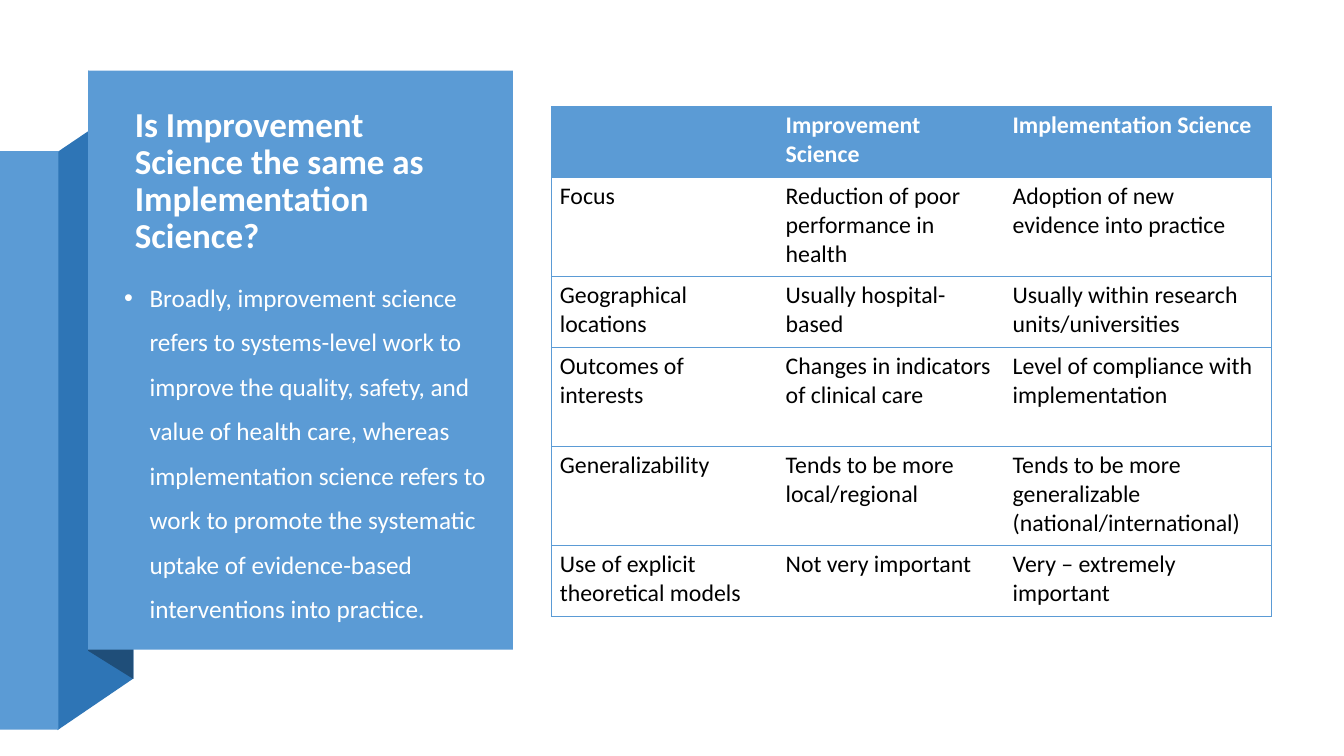
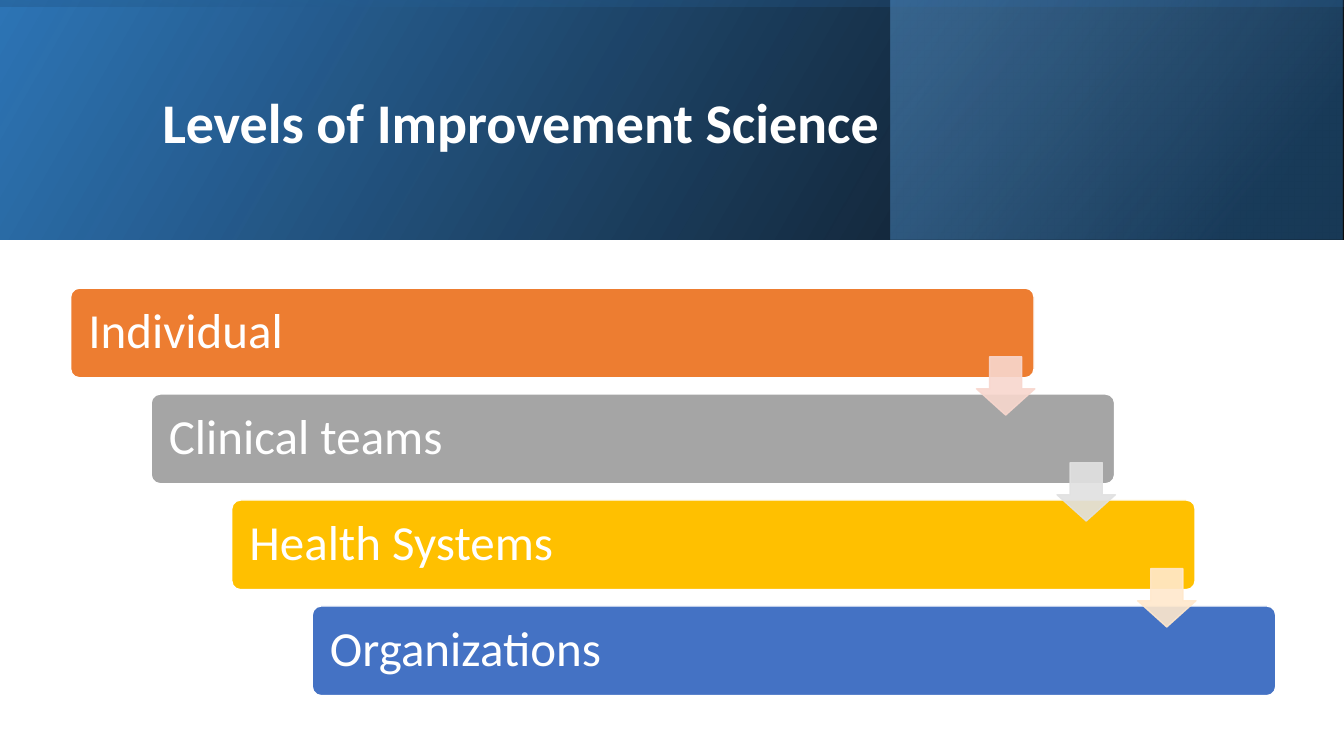
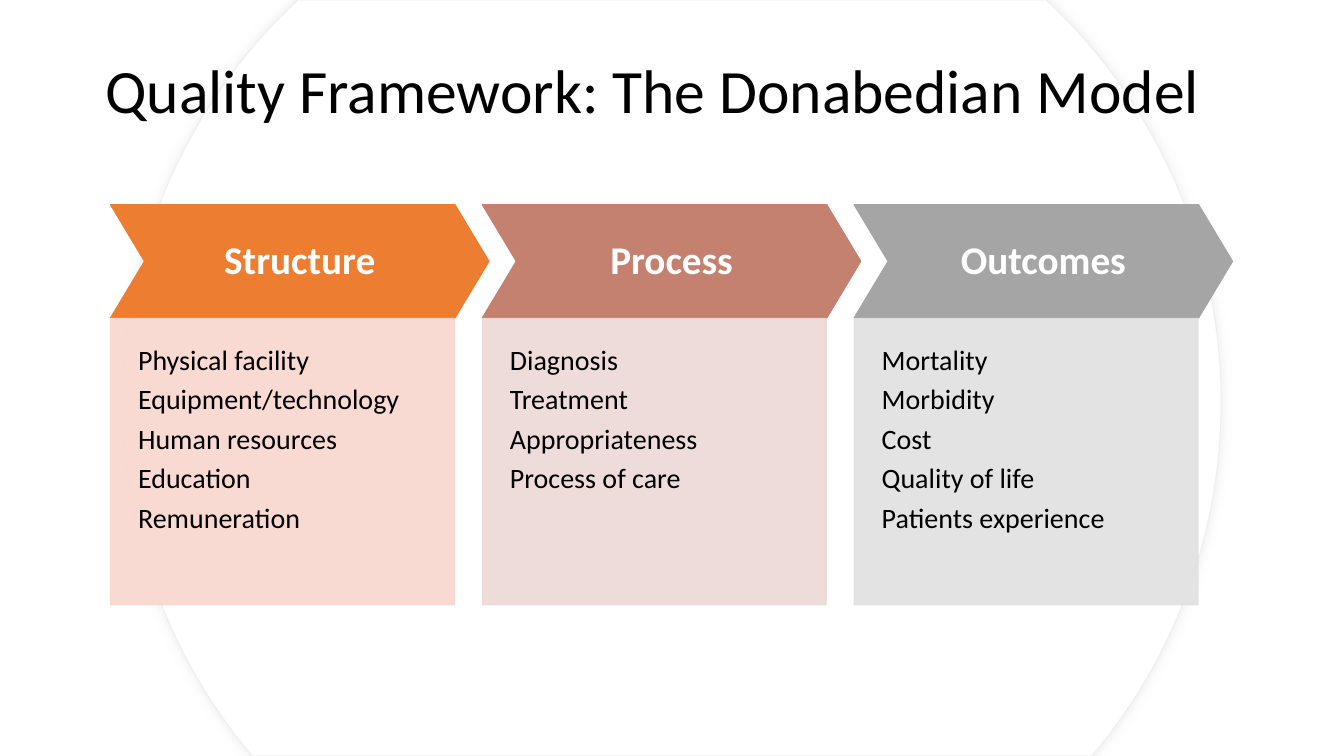
import math
from dataclasses import dataclass
from typing import NamedTuple, Optional

from pptx import Presentation
from pptx import util as u
from pptx.dml.color import RGBColor
from pptx.enum import shapes, text
from pptx.oxml.ns import qn
from lxml import etree


@dataclass(frozen=True)
class Theme:
    font: str = "Calibri"
    white: str = "FFFFFF"
    black: str = "000000"
    blue: str = "5B9BD5"
    mid_blue: str = "2E75B6"
    navy: str = "1F4E79"
    royal: str = "4472C4"
    orange: str = "ED7D31"
    clay: str = "C48170"
    gray: str = "A5A5A5"
    gold: str = "FFC000"
    pale_orange: str = "F8D7CE"
    pale_clay: str = "EDD9D7"
    pale_gray: str = "E1E1E1"
    pale_gold: str = "FFE8CC"
    ring: str = "EFEFEF"
    shade: str = "D9D9D9"
    title_size: float = 44
    banner_size: float = 40
    level_size: float = 35
    stage_size: float = 28
    panel_title_size: float = 25
    card_size: float = 20
    body_size: float = 18
    table_size: float = 17


THEME = Theme()
SLIDE_WIDTH, SLIDE_HEIGHT = 33.87, 19.05
NO_GRID_STYLE = "{2D5ABB26-0587-4C30-8999-92F81FD0307C}"


class Area(NamedTuple):
    """Left, top, width and height in centimetres."""
    left: float
    top: float
    width: float
    height: float

    def lengths(self):
        return [u.Cm(value) for value in self]


class TextStyle(NamedTuple):
    size: float
    color: str
    bold: bool = False
    align: text.PP_ALIGN = text.PP_ALIGN.LEFT
    spacing: float = 0.9
    after: float = 0


class GradientStop(NamedTuple):
    position: float
    color: str
    opacity: int


class Band(NamedTuple):
    area: Area
    start: GradientStop
    end: GradientStop
    angle: float


class Level(NamedTuple):
    name: str
    color: str
    arrow: Optional[str]


class Stage(NamedTuple):
    name: str
    color: str
    pale: str
    items: list[str]


def rgb(color: str) -> RGBColor:
    return RGBColor.from_string(color)


def add_child(parent, tag: str, **attributes):
    child = etree.SubElement(parent, qn(tag))
    for name, value in attributes.items():
        child.set(name, str(value))
    return child


def set_opacity(element, percent: int) -> None:
    for color in element.iter(qn("a:srgbClr")):
        add_child(color, "a:alpha", val=percent * 1000)


def paint(shape, fill: str, line: Optional[str] = None, width: float = 1, opacity: int = 100) -> None:
    shape.shadow.inherit = False
    shape.fill.solid()
    shape.fill.fore_color.rgb = rgb(fill)
    if line:
        shape.line.color.rgb = rgb(line)
        shape.line.width = u.Pt(width)
    else:
        shape.line.fill.background()
    if opacity < 100:
        set_opacity(shape._element.spPr, opacity)


def add_box(slide, kind, area: Area, fill: str, line: Optional[str] = None, opacity: int = 100):
    box = slide.shapes.add_shape(kind, *area.lengths())
    paint(box, fill, line, opacity=opacity)
    return box


def add_outline(slide, points: list[tuple[float, float]], fill: str, **look):
    corners = [(u.Cm(x), u.Cm(y)) for x, y in points]
    builder = slide.shapes.build_freeform(*corners[0], scale=1.0)
    builder.add_line_segments(corners[1:], close=True)
    outline = builder.convert_to_shape()
    paint(outline, fill, **look)
    return outline


def format_para(para, style: TextStyle) -> None:
    para.alignment = style.align
    para.line_spacing = style.spacing
    para.space_after = u.Pt(style.after)
    para.font.name = THEME.font
    para.font.size = u.Pt(style.size)
    para.font.bold = style.bold
    para.font.color.rgb = rgb(style.color)


def write(shape, lines: list[str], style: TextStyle, anchor=text.MSO_ANCHOR.MIDDLE,
          margin: Optional[float] = None) -> None:
    frame = shape.text_frame
    frame.word_wrap = True
    frame.vertical_anchor = anchor
    if margin is not None:
        frame.margin_left = frame.margin_right = u.Cm(margin)
        frame.margin_top = frame.margin_bottom = u.Cm(margin)
    frame.text = "\n".join(lines)
    for para in frame.paragraphs:
        format_para(para, style)


def add_text(slide, area: Area, words: str, style: TextStyle, anchor=text.MSO_ANCHOR.MIDDLE):
    box = slide.shapes.add_textbox(*area.lengths())
    write(box, [words], style, anchor)
    return box


def add_bullet(para, indent: float) -> None:
    properties = para._p.get_or_add_pPr()
    properties.set("marL", str(u.Cm(indent)))
    properties.set("indent", str(-u.Cm(indent)))
    add_child(properties, "a:buFont", typeface="Arial")
    add_child(properties, "a:buChar", char="•")


def set_borders(cell, sides: list[str]) -> None:
    properties = cell._tc.get_or_add_tcPr()
    for index, side in enumerate(sides):
        border = etree.Element(qn(f"a:{side}"), w=str(u.Pt(0.5)))
        add_child(add_child(border, "a:solidFill"), "a:srgbClr", val=THEME.blue)
        properties.insert(index, border)


def add_comparison(slide, left: float, top: float, widths: list[float],
                   heights: list[float], rows: list[list[str]]) -> None:
    area = Area(left, top, sum(widths), sum(heights))
    table = slide.shapes.add_table(len(rows), len(widths), *area.lengths()).table
    table.horz_banding = False
    table._tbl.tblPr.find(qn("a:tableStyleId")).text = NO_GRID_STYLE
    for column, width in zip(table.columns, widths):
        column.width = u.Cm(width)
    for row, height in zip(table.rows, heights):
        row.height = u.Cm(height)
    header = TextStyle(THEME.table_size, THEME.white, bold=True, spacing=1)
    body = TextStyle(THEME.table_size, THEME.black, spacing=1)
    for row_index, row in enumerate(rows):
        for column_index, words in enumerate(row):
            cell = table.cell(row_index, column_index)
            cell.margin_left = cell.margin_right = u.Cm(0.22)
            cell.margin_top = cell.margin_bottom = u.Cm(0.12)
            cell.text = words
            format_para(cell.text_frame.paragraphs[0], body if row_index else header)
            if row_index:
                cell.fill.background()
            else:
                cell.fill.solid()
                cell.fill.fore_color.rgb = rgb(THEME.blue)
            sides = ["lnL"] if column_index == 0 else []
            sides += ["lnR"] if column_index == len(row) - 1 else []
            set_borders(cell, sides + ["lnT", "lnB"])


def build_comparison_slide(slide) -> None:
    rectangle = shapes.MSO_SHAPE.RECTANGLE
    add_outline(slide, [(1.45, 18.4), (3.36, 17.1), (3.36, 2.54), (1.45, 3.83)], THEME.mid_blue)
    add_box(slide, rectangle, Area(0, 3.81, 1.47, 14.58), THEME.blue)
    add_outline(slide, [(2.22, 16.4), (3.36, 17.11), (3.36, 2.51), (2.22, 1.78)], THEME.navy)
    add_box(slide, rectangle, Area(2.22, 1.78, 10.71, 14.59), THEME.blue)
    add_text(slide, Area(3.15, 2.54, 8.84, 4.09),
             "Is Improvement Science the same as Implementation Science?",
             TextStyle(THEME.panel_title_size, THEME.white, bold=True, spacing=0.88))
    body = add_text(
        slide, Area(2.88, 6.63, 10.03, 9.75),
        "Broadly, improvement science refers to systems-level work to improve the quality, "
        "safety, and value of health care, whereas implementation science refers to work to "
        "promote the systematic uptake of evidence-based interventions into practice.",
        TextStyle(THEME.body_size, THEME.white, spacing=1.47), text.MSO_ANCHOR.TOP)
    add_bullet(body.text_frame.paragraphs[0], 0.64)
    add_comparison(
        slide, 13.89, 2.68, [5.69, 5.72, 6.75], [1.78, 2.5, 1.78, 2.5, 2.5, 1.78],
        [["", "Improvement Science", "Implementation Science"],
         ["Focus", "Reduction of poor performance in health",
          "Adoption of new evidence into practice"],
         ["Geographical locations", "Usually hospital-based",
          "Usually within research units/universities"],
         ["Outcomes of interests", "Changes in indicators of clinical care",
          "Level of compliance with implementation"],
         ["Generalizability", "Tends to be more local/regional",
          "Tends to be more generalizable (national/international)"],
         ["Use of explicit theoretical models", "Not very important",
          "Very – extremely important"]])


def add_band(slide, band: Band) -> None:
    box = add_box(slide, shapes.MSO_SHAPE.RECTANGLE, band.area, THEME.navy)
    box.fill.gradient()
    box.fill.gradient_angle = band.angle
    for stop, wanted in zip(box.fill.gradient_stops, (band.start, band.end)):
        stop.position = wanted.position
        stop.color.rgb = rgb(wanted.color)
        set_opacity(stop._gs, wanted.opacity)


def build_levels_slide(slide) -> None:
    full = Area(0, 0, SLIDE_WIDTH, 6.03)
    bands = [
        Band(full, GradientStop(0, THEME.black, 96), GradientStop(1, THEME.mid_blue, 100), 150),
        Band(Area(22.45, 0, 11.39, 6.03), GradientStop(0.19, THEME.navy, 68),
             GradientStop(1, THEME.blue, 48), 140),
        Band(full, GradientStop(0.23, THEME.mid_blue, 16),
             GradientStop(0.99, THEME.black, 45), 260),
    ]
    for band in bands:
        add_band(slide, band)
    add_text(slide, Area(3.84, 0.97, 27, 4.37), "Levels of Improvement Science",
             TextStyle(THEME.banner_size, THEME.white, bold=True))

    levels = [
        Level("Individual", THEME.orange, THEME.pale_orange),
        Level("Clinical teams", THEME.gray, THEME.pale_gray),
        Level("Health Systems", THEME.gold, THEME.pale_gold),
        Level("Organizations", THEME.royal, None),
    ]
    step_x, step_y = 2.03, 2.67
    for index, level in enumerate(levels):
        area = Area(1.78 + index * step_x, 7.26 + index * step_y, 24.28, 2.26)
        bar = add_box(slide, shapes.MSO_SHAPE.ROUNDED_RECTANGLE, area, level.color, THEME.white)
        bar.adjustments[0] = 0.1
        write(bar, [level.name], TextStyle(THEME.level_size, THEME.white), margin=0.38)
    for index, level in enumerate(levels):
        if level.arrow:
            area = Area(24.61 + index * step_x, 8.99 + index * step_y, 1.47, 1.47)
            arrow = add_box(slide, shapes.MSO_SHAPE.DOWN_ARROW, area,
                            level.arrow, level.arrow, opacity=90)
            arrow.adjustments[0] = 0.45
            arrow.adjustments[0], arrow.adjustments[1] = 0.55, 0.45


def add_backdrop(slide) -> None:
    """Draw a large softly shaded circle, cut off at the slide's top and bottom."""
    center_x, center_y, radius = SLIDE_WIDTH / 2, 10.13, 13.84
    first = -math.asin(center_y / radius)
    last = math.asin((SLIDE_HEIGHT - center_y) / radius)
    count = 60
    angles = [first + (last - first) * index / count for index in range(count + 1)]
    offsets = [(radius * math.cos(angle), center_y + radius * math.sin(angle)) for angle in angles]
    right = [(center_x + x, y) for x, y in offsets]
    left = [(center_x - x, y) for x, y in reversed(offsets)]
    circle = add_outline(slide, right + left, THEME.white, line=THEME.ring, width=0.75)
    effects = circle._element.spPr.find(qn("a:effectLst"))
    shadow = add_child(effects, "a:outerShdw", blurRad=u.Pt(8), dist=0, dir=0)
    add_child(shadow, "a:srgbClr", val=THEME.shade)
    set_opacity(shadow, 50)


def build_framework_slide(slide) -> None:
    add_backdrop(slide)
    add_text(slide, Area(2.41, 0.53, 29.03, 3.68), "Quality Framework: The Donabedian Model",
             TextStyle(THEME.title_size, THEME.black))
    stages = [
        Stage("Structure", THEME.orange, THEME.pale_orange,
              ["Physical facility", "Equipment/technology", "Human resources",
               "Education", "Remuneration"]),
        Stage("Process", THEME.clay, THEME.pale_clay,
              ["Diagnosis", "Treatment", "Appropriateness", "Process of care"]),
        Stage("Outcomes", THEME.gray, THEME.pale_gray,
              ["Mortality", "Morbidity", "Cost", "Quality of life", "Patients experience"]),
    ]
    for index, stage in enumerate(stages):
        left = 2.79 + index * 9.37
        chevron = add_box(slide, shapes.MSO_SHAPE.CHEVRON, Area(left, 5.16, 9.53, 2.85),
                          stage.color, stage.color)
        chevron.adjustments[0] = 0.3
        write(chevron, [stage.name],
              TextStyle(THEME.stage_size, THEME.white, True, text.PP_ALIGN.CENTER), margin=0.36)
        card = add_box(slide, shapes.MSO_SHAPE.RECTANGLE, Area(left, 8.03, 8.66, 7.21),
                       stage.pale, stage.pale, opacity=90)
        write(card, stage.items, TextStyle(THEME.card_size, THEME.black, after=6.6),
              text.MSO_ANCHOR.TOP, margin=0.69)


def main() -> None:
    deck = Presentation()
    deck.slide_width, deck.slide_height = u.Cm(SLIDE_WIDTH), u.Cm(SLIDE_HEIGHT)
    blank = deck.slide_layouts[6]
    for build in (build_comparison_slide, build_levels_slide, build_framework_slide):
        build(deck.slides.add_slide(blank))
    deck.save("out.pptx")


if __name__ == "__main__":
    main()
